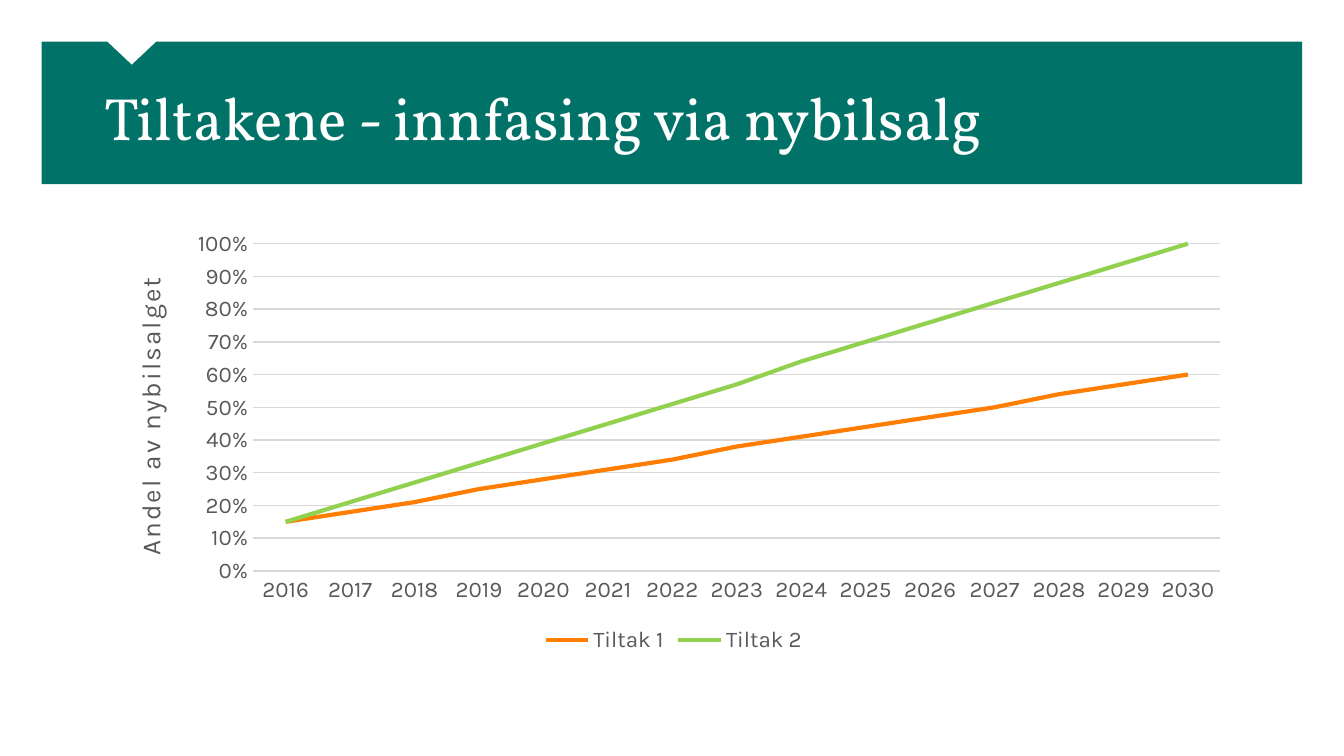
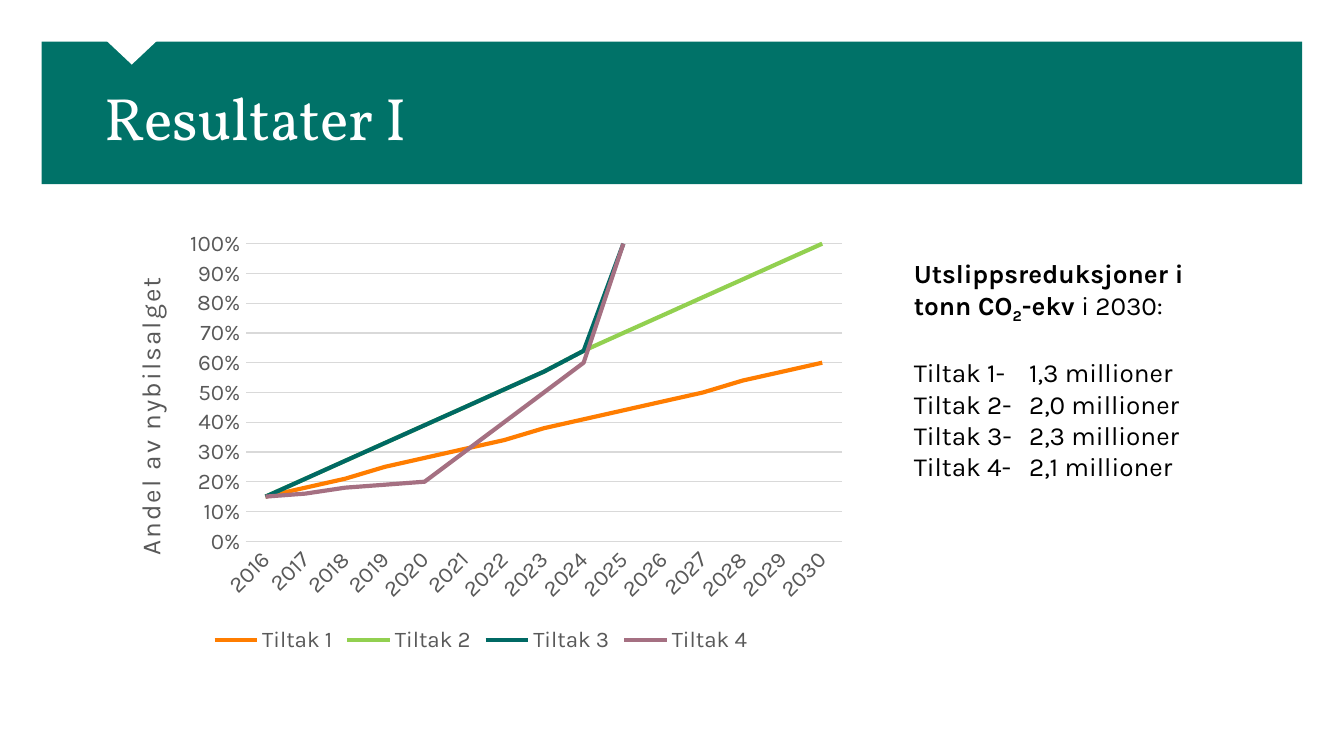
import pptx
import pptx.chart.data
import pptx.dml.color
import pptx.enum.chart
import pptx.enum.shapes
import pptx.enum.text
import pptx.oxml
import pptx.oxml.ns
import pptx.util

Cm, Pt = pptx.util.Cm, pptx.util.Pt
CHART = pptx.enum.chart
SHAPE = pptx.enum.shapes.MSO_SHAPE
ANCHOR = pptx.enum.text.MSO_ANCHOR

COLORS = {
    "band": "007268", "white": "FFFFFF", "black": "000000",
    "label": "595959", "grid": "D9D9D9",
}
HEAD, BODY = "Vollkorn", "Karla"

WIDE, HIGH = 25.4, 14.29
EDGE = 0.79
LEFT = 1.98
FULL = WIDE - 2 * LEFT + 0.07

YEARS = [str(year) for year in range(2016, 2031)]
SERIES = {
    "Tiltak 1": ("FF7D00", [0.15, 0.18, 0.21, 0.25, 0.28, 0.31, 0.34, 0.38,
                            0.41, 0.44, 0.47, 0.5, 0.54, 0.57, 0.6]),
    "Tiltak 2": ("92D050", [0.15, 0.21, 0.27, 0.33, 0.39, 0.45, 0.51, 0.57,
                            0.64, 0.7, 0.76, 0.82, 0.88, 0.94, 1]),
    "Tiltak 3": ("006964", [0.15, 0.21, 0.27, 0.33, 0.39, 0.45, 0.51, 0.57,
                            0.64, 1]),
    "Tiltak 4": ("A57082", [0.15, 0.16, 0.18, 0.19, 0.2, 0.3, 0.4, 0.5,
                            0.6, 1]),
}
AXIS = "Andel av nybilsalget"
BOLD = {"bold": True}
NOTE = [
    [("Utslippsreduksjoner i", BOLD)],
    [("tonn CO", BOLD), ("2", {"bold": True, "base": -25}),
     ("-ekv ", BOLD), ("i 2030:", {})],
]
CUTS = [("Tiltak 1-", "1,3 millioner"), ("Tiltak 2-", "2,0 millioner"),
        ("Tiltak 3-", "2,3 millioner"), ("Tiltak 4-", "2,1 millioner")]
SLIDES = [
    {"title": "Tiltakene - innfasing via nybilsalg", "width": FULL,
     "names": ["Tiltak 1", "Tiltak 2"]},
    {"title": "Resultater I", "width": 14.22, "names": list(SERIES),
     "note": True},
]


def rgb(name):
    return pptx.dml.color.RGBColor.from_string(COLORS.get(name, name))


def style(font, size, color="label", name=BODY, bold=False):
    font.size, font.name, font.bold = Pt(size), name, bold
    font.color.rgb = rgb(color)


def add_text(slide, box, paras, size=14, color="black", name=BODY,
             inset=None, anchor=ANCHOR.TOP, grow=False, tab=None, gaps=()):
    """Add a text box; paras holds lists of (text, run format) pairs.

    gaps maps a paragraph's index to its space before, in points.
    """
    frame = slide.shapes.add_textbox(*map(Cm, box)).text_frame
    frame.word_wrap = True
    frame.vertical_anchor = anchor
    if grow:
        frame.auto_size = pptx.enum.text.MSO_AUTO_SIZE.SHAPE_TO_FIT_TEXT
    if inset is not None:
        frame.margin_left = frame.margin_right = Cm(inset)
        frame.margin_top = frame.margin_bottom = Cm(inset)
    for i, runs in enumerate(paras):
        para = frame.paragraphs[0] if i == 0 else frame.add_paragraph()
        if i in gaps:
            para.space_before = Pt(gaps[i])
        if tab and any("\t" in text for text, _ in runs):
            stops = pptx.oxml.parse_xml(
                f'<a:tabLst {pptx.oxml.ns.nsdecls("a")}>'
                f'<a:tab pos="{int(Cm(tab))}" algn="l"/></a:tabLst>')
            para._p.get_or_add_pPr().append(stops)
        for text, form in runs:
            run = para.add_run()
            run.text = text
            style(run.font, size, color, name, form.get("bold", False))
            if "base" in form:
                run._r.get_or_add_rPr().set(
                    "baseline", str(form["base"] * 1000))


def add_block(slide, kind, box, color, turn=0):
    block = slide.shapes.add_shape(kind, *map(Cm, box))
    block.shadow.inherit = False
    block.fill.solid()
    block.fill.fore_color.rgb = rgb(color)
    block.line.fill.background()
    block.rotation = turn


def add_frame(slide, title):
    """Add the band, its notch and the title."""
    add_block(slide, SHAPE.RECTANGLE,
              (EDGE, EDGE, WIDE - 2 * EDGE, 2.69), "band")
    add_block(slide, SHAPE.ISOSCELES_TRIANGLE,
              (LEFT, 0.74, 1.02, 0.48), "white", 180)
    add_text(slide, (LEFT, 1.52, FULL, 1.37), [[(title, {})]], size=32,
             color="white", name=HEAD, inset=0, anchor=ANCHOR.MIDDLE)


def add_lines(slide, names, width):
    """Add the line chart of new-car shares."""
    data = pptx.chart.data.CategoryChartData(number_format="0%")
    data.categories = YEARS
    for name in names:
        vals = SERIES[name][1]
        data.add_series(name, vals + [None] * (len(YEARS) - len(vals)))
    chart = slide.shapes.add_chart(
        CHART.XL_CHART_TYPE.LINE, Cm(LEFT), Cm(4.19), Cm(width), Cm(8.26),
        data).chart
    chart.has_title = False
    style(chart.font, 10, "black")
    chart.plots[0].vary_by_categories = False
    for line in chart.plots[0].series:
        line.smooth = False
        line.marker.style = CHART.XL_MARKER_STYLE.NONE
        line.format.line.width = Pt(2.25)
        line.format.line.color.rgb = rgb(SERIES[line.name][0])

    chart.has_legend = True
    chart.legend.position = CHART.XL_LEGEND_POSITION.BOTTOM
    chart.legend.include_in_layout = False
    style(chart.legend.font, 12)

    years, share = chart.category_axis, chart.value_axis
    for axis in (years, share):
        axis.major_tick_mark = axis.minor_tick_mark = CHART.XL_TICK_MARK.NONE
        style(axis.tick_labels.font, 12)
        # This angle lets the labels turn by themselves when space is short
        for body in axis._element.xpath("c:txPr/a:bodyPr"):
            body.set("rot", "-60000000")
            body.set("vert", "horz")
    share.minimum_scale, share.maximum_scale = 0, 1
    share.major_unit = 0.1
    share.tick_labels.number_format = "0%"
    share.tick_labels.number_format_is_linked = False
    share.format.line.fill.background()
    share.has_major_gridlines = True
    for edge in (years.format.line, share.major_gridlines.format.line):
        edge.color.rgb = rgb("grid")
        edge.width = Pt(0.75)

    frame = share.axis_title.text_frame
    frame._txBody.bodyPr.set("rot", "-5400000")
    frame._txBody.bodyPr.set("vert", "horz")
    run = frame.paragraphs[0].add_run()
    run.text = AXIS
    style(run.font, 14)
    run._r.get_or_add_rPr().set("spc", "100")


def main():
    deck = pptx.Presentation()
    deck.slide_width, deck.slide_height = Cm(WIDE), Cm(HIGH)
    for page in SLIDES:
        slide = deck.slides.add_slide(deck.slide_layouts[6])
        add_frame(slide, page["title"])
        add_lines(slide, page["names"], page["width"])
        if page.get("note"):
            rows = [[("\t".join(cut), {})] for cut in CUTS]
            add_text(slide, (17.02, 4.75, 6.78, 5.21), NOTE + rows,
                     grow=True, tab=2.18, gaps={len(NOTE): 17})
    deck.save("out.pptx")


if __name__ == "__main__":
    main()
